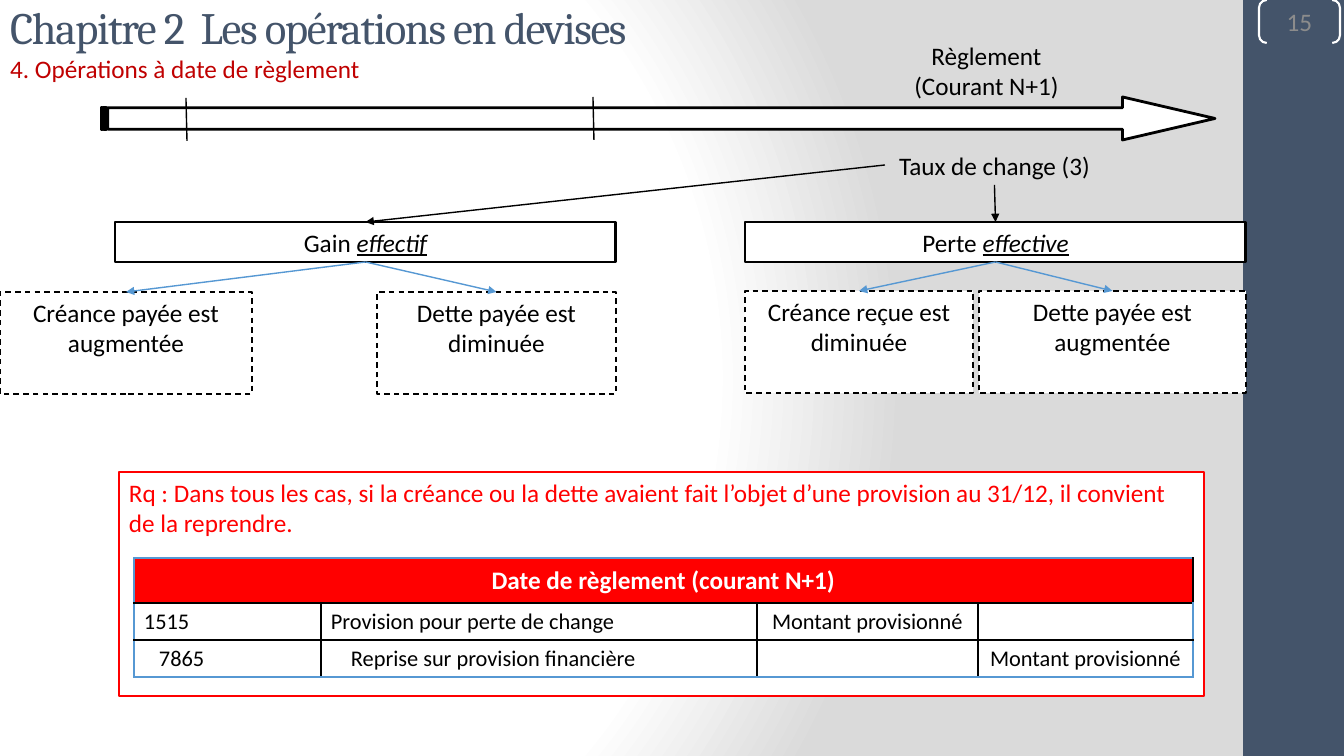
from lxml import etree
from pptx import Presentation
from pptx.dml.color import RGBColor
from pptx.enum.dml import MSO_LINE
from pptx.enum.shapes import MSO_CONNECTOR, MSO_SHAPE
from pptx.enum.text import MSO_ANCHOR, MSO_AUTO_SIZE, PP_ALIGN
from pptx.oxml import parse_xml
from pptx.oxml.ns import nsdecls, qn
from pptx.util import Pt

RECT, STRAIGHT, DASH = MSO_SHAPE.RECTANGLE, MSO_CONNECTOR.STRAIGHT, MSO_LINE.DASH
LEFT, CENTER = PP_ALIGN.LEFT, PP_ALIGN.CENTER
TOP, MIDDLE = MSO_ANCHOR.TOP, MSO_ANCHOR.MIDDLE
SITE_TOP, SITE_LEFT, SITE_BOTTOM = 0, 1, 2

# Content (lengths in px)
COLORS = {"white": "FFFFFF", "black": "000000", "navy": "44546A", "grey": "8C8C8C",
          "shade": "DADADA", "red": "FF0000", "dark_red": "C00000", "blue": "5698D3"}
SLIDE_W, SLIDE_H = 1344, 756
TITLE = "Chapitre 2  Les opérations en devises"
SUBTITLE = "4. Opérations à date de règlement"
PAGE = "15"
SETTLEMENT = ["Règlement", "(Courant N+1)"]
RATE = "Taux de change (3)"
TICKS = [(186, 98), (593, 97)]
RESULT_Y, RESULT_W, RESULT_H = 222, 501, 40
CASE_H = 102
# (left, word, emphasis, site on the rate label, cases top, cases (left, width, text))
RESULTS = [
    (745, "Perte ", "effective", SITE_BOTTOM, 291,
     [(745, 228, "Créance reçue est diminuée"), (979, 267, "Dette payée est augmentée")]),
    (115, "Gain ", "effectif", SITE_LEFT, 292,
     [(0, 252, "Créance payée est augmentée"), (377, 239, "Dette payée est diminuée")]),
]
REMARK = ("Rq : Dans tous les cas, si la créance ou la dette avaient fait l’objet "
          "d’une provision au 31/12, il convient de la reprendre.")
HEADER = "Date de règlement (courant N+1)"
ENTRIES = [("1515", "Provision pour perte de change", "Montant provisionné", ""),
           ("7865", "Reprise sur provision financière", "", "Montant provisionné")]
CREDIT_INDENTS = {0: 15, 1: 20}
COL_W, ROW_H = [187, 436, 221, 215], [45, 37, 37]


def px(n):
    return round(n * 914400 / 100.8)


def rgb(name):
    return RGBColor.from_string(COLORS[name])


def set_font(font, size, color, name="Calibri"):
    font.size, font.name = Pt(size), name
    font.color.rgb = rgb(color)


def write(sp, lines, color="black", align=CENTER, anchor=TOP):
    tf = sp.text_frame
    tf.word_wrap = True
    tf.vertical_anchor = anchor
    tf.text = "\n".join(lines)
    for p in tf.paragraphs:
        p.alignment = align
        set_font(p.font, 18, color)
    return tf


def add_box(box, fill="white", line="black", width=1, dash=None, kind=RECT):
    sp = s.shapes.add_shape(kind, *map(px, box))
    sp.shadow.inherit = False
    if fill:
        sp.fill.solid()
        sp.fill.fore_color.rgb = rgb(fill)
    else:
        sp.fill.background()
    if line:
        sp.line.color.rgb = rgb(line)
        sp.line.width = Pt(width)
        if dash:
            sp.line.dash_style = dash
    else:
        sp.line.fill.background()
    return sp


def add_label(box, lines):
    tb = s.shapes.add_textbox(*map(px, box))
    write(tb, lines)
    return tb


def add_line(color, ends=(0, 0, 0, 0)):
    cx = s.shapes.add_connector(STRAIGHT, *map(px, ends))
    cx.line.color.rgb = rgb(color)
    cx.line.width = Pt(1)
    etree.SubElement(cx._element.spPr, qn("a:effectLst"))
    return cx


def add_arrow(start, site, end, color):
    cx = add_line(color)
    cx.begin_connect(start, site)
    cx.end_connect(end, SITE_TOP)
    etree.SubElement(cx.line._get_or_add_ln(), qn("a:tailEnd"), type="triangle")


def set_borders(cell, sides):
    tcPr = cell._tc.get_or_add_tcPr()
    for side, color in sides.items():
        tcPr.append(parse_xml(
            f'<a:ln{side} {nsdecls("a")} w="12700"><a:solidFill>'
            f'<a:srgbClr val="{COLORS[color]}"/></a:solidFill></a:ln{side}>'))


prs = Presentation()
prs.slide_width, prs.slide_height = px(SLIDE_W), px(SLIDE_H)
s = prs.slides.add_slide(prs.slide_layouts[5])

# Background
s.background.fill.gradient()
grad = s.background._cSld.find(".//" + qn("a:gradFill"))
stops = "".join(f'<a:gs pos="{pos}000"><a:srgbClr val="{COLORS[c]}"/></a:gs>'
                for pos, c in [(0, "white"), (75, "white"), (100, "shade")])
grad.getparent().replace(grad, parse_xml(
    f'<a:gradFill {nsdecls("a")} rotWithShape="1"><a:gsLst>{stops}</a:gsLst>'
    '<a:path path="circle"><a:fillToRect l="20000" t="50000" r="100000" b="50000"/>'
    '</a:path></a:gradFill>'))

# Side bar and page number
add_box((1243, 0, 101, SLIDE_H), "navy", None)
page = add_box((1259, 0, 81, 43), None, "white", 1.5, kind=MSO_SHAPE.DOUBLE_BRACKET)
page.adjustments[0] = 0.18
tf = write(page, [PAGE], "grey", anchor=MIDDLE)
tf.margin_left = tf.margin_right = tf.margin_top = tf.margin_bottom = 0

# Title
title = s.shapes.title
title.left, title.top, title.width, title.height = map(px, (0, 0, 1120, 98))
tf = title.text_frame
tf.auto_size = MSO_AUTO_SIZE.NONE
tf.vertical_anchor = TOP
tf.margin_top = tf.margin_bottom = 0
p = tf.paragraphs[0]
p.alignment = LEFT
r = p.add_run()
r.text = TITLE
set_font(r.font, 32, "navy", "Cambria")
r.font._element.set("spc", "-100")
p.add_line_break()
r = p.add_run()
r.text = SUBTITLE
set_font(r.font, 18, "dark_red")

# Remark and its journal entry
write(add_box((119, 472, 1085, 224), line="red", width=2), [REMARK], "red", LEFT)
table = s.shapes.add_table(len(ROW_H), len(COL_W), px(134), px(558),
                           px(sum(COL_W)), px(sum(ROW_H))).table
table.first_row = table.horz_banding = False
for col, w in zip(table.columns, COL_W):
    col.width = px(w)
for row, h in zip(table.rows, ROW_H):
    row.height = px(h)
table.cell(0, 0).merge(table.cell(0, len(COL_W) - 1))
last_row, last_col = len(ROW_H) - 1, len(COL_W) - 1
for i, texts in enumerate([(HEADER, "", "", "")] + ENTRIES):
    for j, text in enumerate(texts):
        cell = table.cell(i, j)
        set_borders(cell, {"L": "black" if j else "blue",
                           "R": "blue" if j == last_col else "black",
                           "T": "black" if i else "blue",
                           "B": "blue" if i == last_row else "black"})
        cell.vertical_anchor = MIDDLE
        cell.margin_top = cell.margin_bottom = px(2)
        cell.margin_left = px(10 + (CREDIT_INDENTS.get(j, 0) if i == last_row else 0))
        p = cell.text_frame.paragraphs[0]
        if text:
            p.text = text
        p.alignment = CENTER if i == 0 or j > 1 else LEFT
        p.font.bold = i == 0
        if i == 0:
            cell.fill.solid()
            cell.fill.fore_color.rgb = rgb("red")
            set_font(p.font, 18, "white")
        else:
            cell.fill.background()
            set_font(p.font, 16, "black")

# Timeline
timeline = add_box((101, 97, 1114, 43), width=2, kind=MSO_SHAPE.STRIPED_RIGHT_ARROW)
timeline.adjustments[0], timeline.adjustments[1] = 0.5, 2.15
for x, y in TICKS:
    add_line("black", (x, y, x + 1, y + 43))
add_label((877, 35, 219, 72), SETTLEMENT)
rate = add_label((885, 145, 219, 40), [RATE])

# Exchange results and their cases
for x, word, emphasis, site, case_y, cases in RESULTS:
    result = add_box((x, RESULT_Y, RESULT_W, RESULT_H), width=2)
    r = write(result, [word]).paragraphs[0].add_run()
    r.text = emphasis
    r.font.italic = r.font.underline = True
    add_arrow(rate, site, result, "black")
    for left, width, text in cases:
        case = add_box((left, case_y, width, CASE_H), dash=DASH)
        write(case, [text])
        add_arrow(result, SITE_BOTTOM, case, "blue")

prs.save("out.pptx")
